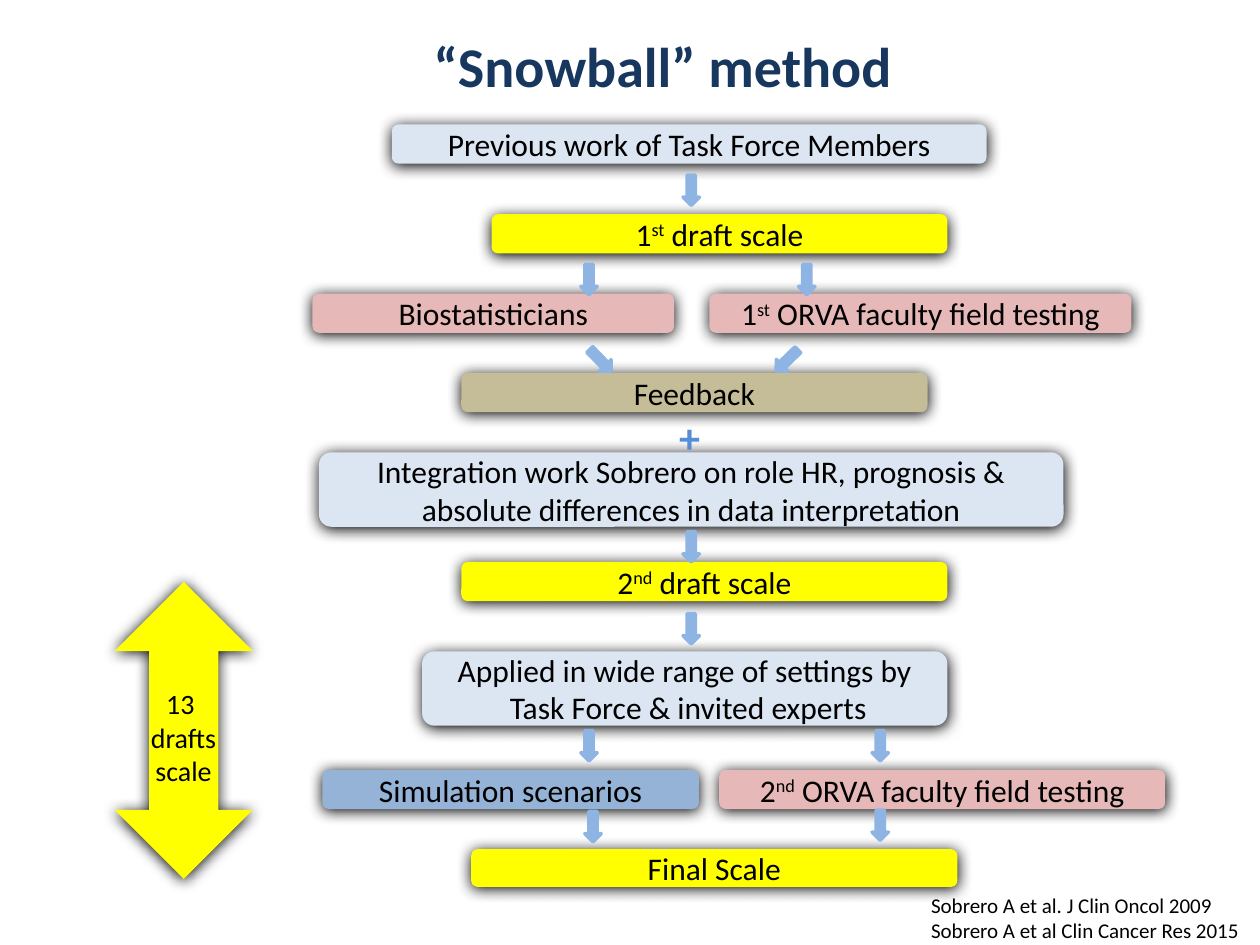
from pptx import Presentation
from pptx.dml.color import RGBColor
from pptx.enum import shapes, text
from pptx.oxml import parse_xml
from pptx.oxml.ns import nsdecls
from pptx.util import Cm, Pt

SHADOW = (
    f'<a:effectLst {nsdecls("a")}><a:outerShdw blurRad="107950" dist="12700" dir="5400000" '
    'algn="ctr" rotWithShape="0"><a:srgbClr val="000000"/></a:outerShdw></a:effectLst>'
)
YELLOW, PALE, PINK, ARROW = "FFFF00", "DCE6F2", "E6B9B8", "8EB4E3"


def add_shape(kind, place, fill, shadow=False):
    sp = s.shapes.add_shape(kind, *[Cm(v) for v in place])
    sp.shadow.inherit = False
    sp.fill.solid()
    sp.fill.fore_color.rgb = RGBColor.from_string(fill)
    sp.line.fill.background()
    if shadow:
        props = sp._element.spPr
        props.remove(props.find("{*}effectLst"))
        props.append(parse_xml(SHADOW))
    return sp


def write(sp, lines, size, color="000000", bold=False, align="CENTER", anchor="MIDDLE", wrap=True):
    tf = sp.text_frame
    tf.word_wrap = wrap
    tf.vertical_anchor = text.MSO_ANCHOR[anchor]
    for i, line in enumerate(lines.split("\n")):
        p = tf.paragraphs[0] if i == 0 else tf.add_paragraph()
        p.alignment = text.PP_ALIGN[align]
        p.font.name = "Calibri"
        p.font.size = Pt(size)
        p.font.bold = bold
        p.font.color.rgb = RGBColor.from_string(color)
        for j, part in enumerate(line.split("^")):
            r = p.add_run()
            r.text = part
            if j == 1:
                r._r.get_or_add_rPr().set("baseline", "30000")


prs = Presentation()
prs.slide_width, prs.slide_height = Cm(25.4), Cm(19.05)
s = prs.slides.add_slide(prs.slide_layouts[6])

title = s.shapes.add_textbox(Cm(0.79), Cm(-0.28), Cm(24.89), Cm(3.18))
write(title, " “Snowball” method", 32, "17375E", bold=True)

sources = s.shapes.add_textbox(Cm(18.52), Cm(17.86), Cm(6.81), Cm(1.27))
write(sources, "Sobrero A et al. J Clin Oncol 2009\nSobrero A et al Clin Cancer Res 2015",
      12, align="LEFT", anchor="TOP", wrap=False)

steps = [
    ("Previous work of Task Force Members", 7.9, 2.51, 11.99, 0.79, PALE),
    ("1^st^ draft scale", 9.91, 4.32, 9.19, 0.79, YELLOW),
    ("Biostatisticians", 6.3, 5.92, 7.29, 0.79, PINK),
    ("1^st^ ORVA faculty field testing", 14.3, 5.92, 8.51, 0.79, PINK),
    ("Feedback", 9.3, 7.52, 9.4, 0.79, "C4BD97"),
    ("Integration work Sobrero on role HR, prognosis & absolute differences in data interpretation",
     6.43, 9.12, 15.01, 1.5, PALE),
    ("2^nd^ draft scale", 9.3, 11.33, 9.8, 0.79, YELLOW),
    ("Applied in wide range of settings by\n Task Force & invited experts",
     8.51, 13.13, 10.59, 1.5, PALE),
    ("Simulation scenarios", 6.5, 15.52, 7.59, 0.79, "95B3D7"),
    ("2^nd^ ORVA faculty field testing", 14.5, 15.52, 8.99, 0.79, PINK),
    ("Final Scale", 9.5, 17.12, 9.8, 0.76, YELLOW),
]
for label, x, y, w, h, fill in steps:
    box = add_shape(shapes.MSO_SHAPE.ROUNDED_RECTANGLE, (x, y, w, h), fill, shadow=True)
    write(box, label, 18)

add_shape(shapes.MSO_SHAPE.UP_DOWN_ARROW, (2.31, 11.73, 2.79, 5.99), YELLOW, shadow=True)
drafts = s.shapes.add_textbox(Cm(2.29), Cm(13.72), Cm(2.82), Cm(2.31))
write(drafts, "13 \ndrafts\nscale", 16, anchor="TOP")

plus = s.shapes.add_textbox(Cm(13.44), Cm(8.18), Cm(0.94), Cm(1.27))
write(plus, "+", 24, "558ED5", bold=True, align="LEFT", anchor="TOP", wrap=False)

arrows = [
    (13.77, 3.53, 0), (11.71, 5.33, 0), (16.1, 5.33, 0),
    (11.94, 6.96, 315.7), (15.7, 6.96, 45.7),
    (13.77, 10.72, 0), (13.77, 12.37, 0),
    (11.71, 14.73, 0), (17.58, 14.73, 0),
    (11.79, 16.36, 0), (17.58, 16.33, 0),
]
for x, y, angle in arrows:
    arrow = add_shape(shapes.MSO_SHAPE.DOWN_ARROW, (x, y, 0.33, 0.61), ARROW)
    arrow.line.color.rgb = RGBColor.from_string(ARROW)
    arrow.line.width = Pt(2)
    arrow.rotation = angle

prs.save("out.pptx")
